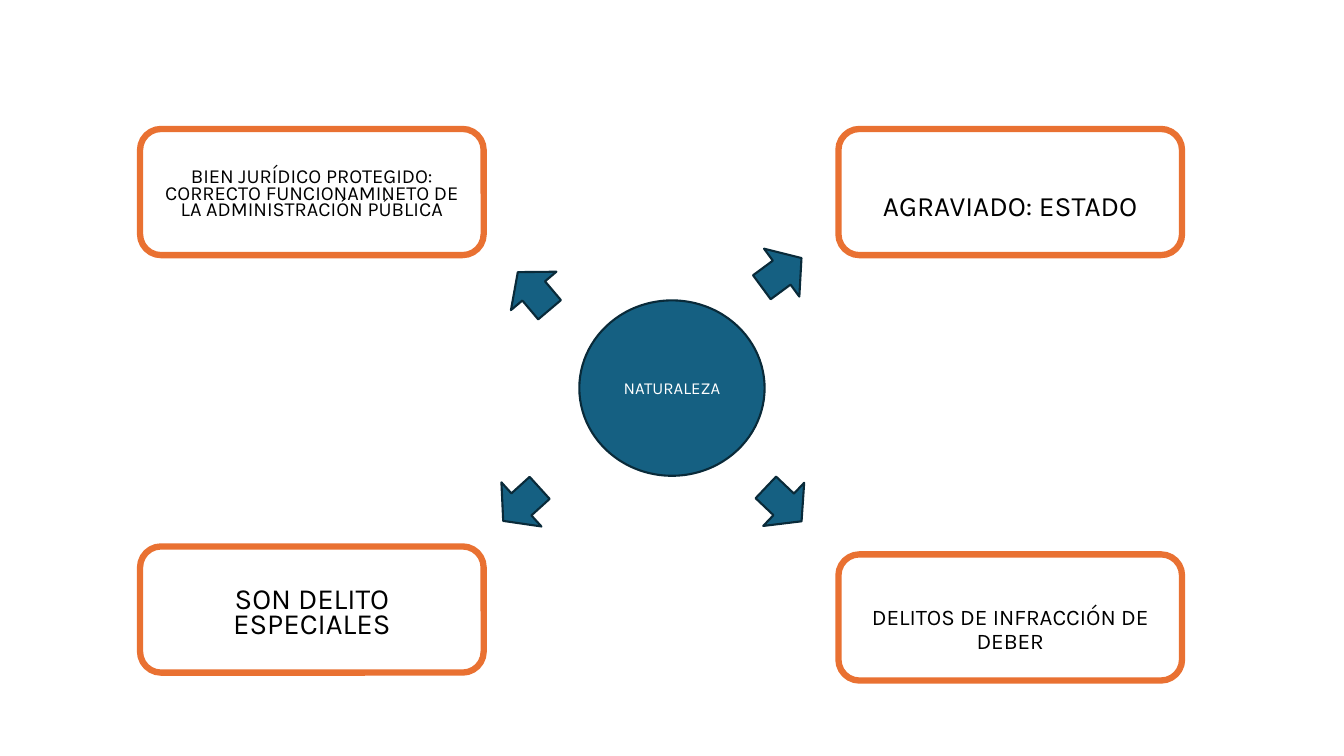
from pptx import Presentation
from pptx.dml.color import RGBColor
from pptx.enum.shapes import MSO_SHAPE as Preset
from pptx.enum.text import MSO_ANCHOR, PP_ALIGN
from pptx.util import Cm, Pt

BLUE = RGBColor(0x15, 0x60, 0x82)
NAVY = RGBColor(0x09, 0x2A, 0x39)
ORANGE = RGBColor(0xE9, 0x71, 0x32)
BLACK = RGBColor(0, 0, 0)
WHITE = RGBColor(0xFF, 0xFF, 0xFF)


def add_shape(preset, left, top, width, height, fill, line, line_width):
    shape = slide.shapes.add_shape(preset, Cm(left), Cm(top), Cm(width), Cm(height))
    shape.shadow.inherit = False
    if fill is None:
        shape.fill.background()
    else:
        shape.fill.solid()
        shape.fill.fore_color.rgb = fill
    shape.line.color.rgb = line
    shape.line.width = Pt(line_width)
    return shape


def write(shape, text, size, color, spacing=1.0):
    frame = shape.text_frame
    frame.word_wrap = True
    frame.vertical_anchor = MSO_ANCHOR.MIDDLE
    frame.text = text
    paragraph = frame.paragraphs[0]
    paragraph.alignment = PP_ALIGN.CENTER
    paragraph.line_spacing = spacing
    font = paragraph.runs[0].font
    font.name = "Karla"
    font.size = Pt(size)
    font.color.rgb = color


presentation = Presentation()
presentation.slide_width = Cm(33.87)
presentation.slide_height = Cm(19.05)
slide = presentation.slides.add_slide(presentation.slide_layouts[6])

# Central circle
circle = add_shape(Preset.OVAL, 14.6, 7.57, 4.67, 4.42, BLUE, NAVY, 1.5)
write(circle, "NATURALEZA", 12, WHITE)

# Corner boxes: left, top, text, size, line spacing, top inset
LEFT, RIGHT, UPPER = 3.53, 21.13, 3.25
boxes = [
    (LEFT, UPPER, "BIEN JURÍDICO PROTEGIDO: CORRECTO FUNCIONAMINETO DE LA ADMINISTRACIÓN PÚBLICA",
     14.3, 0.7, 0.28),
    (RIGHT, UPPER, "AGRAVIADO: ESTADO", 20, 0.9, 0.89),
    (LEFT, 13.77, "SON DELITO ESPECIALES", 20.9, 0.7, 0.38),
    (RIGHT, 13.97, "DELITOS DE INFRACCIÓN DE DEBER", 16, 0.9, 0.79),
]
for left, top, text, size, spacing, inset in boxes:
    box = add_shape(Preset.ROUNDED_RECTANGLE, left, top, 8.66, 3.18, None, ORANGE, 4.5)
    write(box, text, size, BLACK, spacing)
    box.text_frame.margin_top = Cm(inset)

# Arrows from the circle to the boxes: left, top, rotation
arrows = [
    (19.08, 6.12, 323.6),
    (19.13, 11.96, 43.5),
    (12.52, 11.96, 137.8),
    (12.83, 6.58, 229.8),
]
for left, top, rotation in arrows:
    arrow = add_shape(Preset.RIGHT_ARROW, left, top, 1.24, 1.5, BLUE, NAVY, 1.5)
    arrow.rotation = rotation

presentation.save("out.pptx")
